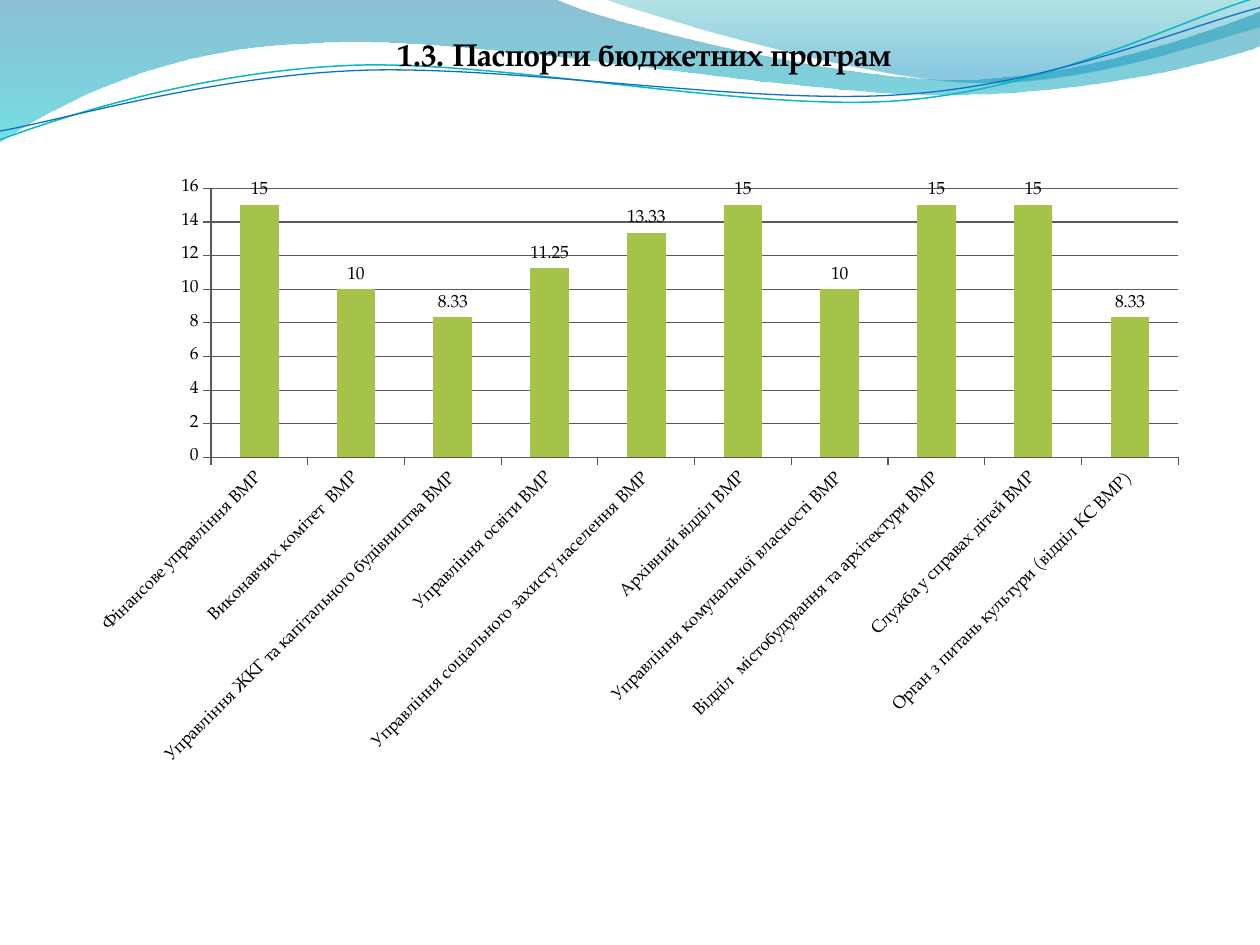
"""Build the slide on budget programme passports: a wave banner, a title and a column chart."""
from dataclasses import dataclass
from typing import Optional

from lxml import etree
from pptx import Presentation
from pptx import util as u
from pptx.chart.data import CategoryChartData
from pptx.dml.color import RGBColor
from pptx.enum import chart as charts, text
from pptx.oxml.ns import qn

GRID = u.Inches(1)
FONT = "TeX Gyre Pagella"
COLOURS = {
    "text": "000000",
    "axis": "595959",
    "column": "A5C249",
    "deep": "0074A1",
    "cyan": "00C6CF",
    "teal": "00A1A9",
    "sky": "008BBF",
    "teal line": "0AB8BF",
    "blue line": "0F6FC6",
}
SCORES = {
    "Фінансове управління ВМР": 15,
    "Виконавчих комітет  ВМР": 10,
    "Управління ЖКГ та капітального будівництва ВМР": 8.33,
    "Управління освіти ВМР": 11.25,
    "Управління соціального захисту населення ВМР": 13.33,
    "Архівний відділ ВМР": 15,
    "Управління комунальної власності ВМР": 10,
    "Відділ  містобудування та архітектури ВМР": 15,
    "Служба у справах дітей ВМР": 15,
    "Орган з питань культури (відділ КС ВМР)": 8.33,
}


@dataclass(frozen=True)
class Stop:
    """A gradient stop; position and opacity are shares of one."""
    position: float
    colour: str
    opacity: float


@dataclass(frozen=True)
class Wave:
    """An outline in grid units; one point makes a straight step, three make a curve."""
    start: tuple
    steps: tuple
    stops: tuple = ()
    line: Optional[str] = None
    weight: float = 0


WAVES = (
    Wave((0, 0), (
        ((4.4, -0.01),),
        ((4.76, 0.17), (6.64, 0.63), (7.58, 0.63)),
        ((8.53, 0.63), (9.58, 0.26), (10, 0.09)),
        ((10.01, 0.36),),
        ((9.83, 0.44), (8.7, 0.76), (7.46, 0.75)),
        ((6.22, 0.75), (3.82, 0.28), (2.57, 0.34)),
        ((1.29, 0.36), (0.46, 0.83), (-0.01, 1.13)),
    ), stops=(Stop(0, "deep", 0.45), Stop(1, "cyan", 0.55))),
    Wave((4.79, -0.01), (
        ((5.09, 0.11), (6.82, 0.62), (7.69, 0.65)),
        ((8.56, 0.69), (9.61, 0.32), (10, 0.21)),
        ((10, 0),),
    ), stops=(Stop(0, "teal", 0.3), Stop(0.8, "sky", 0.45))),
    Wave((0, 1.11), (
        ((0.48, 0.93), (1.58, 0.57), (2.77, 0.52)),
        ((3.95, 0.47), (5.93, 0.89), (7.13, 0.8)),
        ((8.33, 0.71), (9.38, 0.15), (9.98, -0.02)),
    ), line="teal line", weight=0.85),
    Wave((0, 1.04), (
        ((0.47, 0.96), (1.64, 0.61), (2.83, 0.56)),
        ((4.03, 0.51), (5.97, 0.84), (7.17, 0.75)),
        ((8.36, 0.67), (9.41, 0.21), (10, 0.06)),
    ), line="blue line", weight=0.75),
)


def colour(name: str) -> RGBColor:
    """Look up a named colour."""
    return RGBColor.from_string(COLOURS[name])


def grid(*lengths: float) -> list:
    """Turn grid units into slide lengths."""
    return [u.Emu(round(length * GRID)) for length in lengths]


def curve_steps(shape, steps: tuple) -> None:
    """Join each run of three straight segments into one cubic curve."""
    segments = iter(list(shape._element.iter(qn("a:lnTo"))))
    for step in steps:
        first, *others = [next(segments) for _ in step]
        if others:
            first.tag = qn("a:cubicBezTo")
            for segment in others:
                first.append(segment[0])
                segment.getparent().remove(segment)


def fill_gradient(shape, stops: tuple) -> None:
    """Fill a shape from top to bottom with see-through colours."""
    shape.fill.gradient()
    shape.fill.gradient_angle = 270
    for target, stop in zip(shape.fill.gradient_stops, stops):
        target.position = stop.position
        target.color.rgb = colour(stop.colour)
        alpha = etree.SubElement(target._gs[0], qn("a:alpha"))
        alpha.set("val", str(round(stop.opacity * 100000)))


def draw_wave(slide, wave: Wave) -> None:
    """Draw one filled or stroked wave."""
    builder = slide.shapes.build_freeform(*grid(*wave.start))
    points = [grid(*point) for step in wave.steps for point in step]
    builder.add_line_segments(points, close=bool(wave.stops))
    shape = builder.convert_to_shape()
    shape.shadow.inherit = False
    curve_steps(shape, wave.steps)
    if wave.stops:
        fill_gradient(shape, wave.stops)
        shape.line.fill.background()
    else:
        shape.fill.background()
        shape.line.color.rgb = colour(wave.line)
        shape.line.width = u.Pt(wave.weight)


def draw_title(slide, wording: str) -> None:
    """Place the title over the waves."""
    title = slide.shapes.title
    slide.shapes._spTree.append(title._element)
    title.left, title.top, title.width, title.height = grid(2.81, 0.23, 4.61, 0.4)
    frame = title.text_frame
    frame.text = wording
    frame.vertical_anchor = text.MSO_ANCHOR.TOP
    frame.auto_size = text.MSO_AUTO_SIZE.SHAPE_TO_FIT_TEXT
    paragraph = frame.paragraphs[0]
    paragraph.alignment = text.PP_ALIGN.CENTER
    font = paragraph.font
    font.name, font.size, font.bold = FONT, u.Pt(18), True
    font.color.rgb = colour("text")


def draw_chart(slide, scores: dict) -> None:
    """Draw the scores as labelled columns."""
    data = CategoryChartData()
    data.categories = scores.keys()
    data.add_series("Series 1", scores.values())
    chart = slide.shapes.add_chart(
        charts.XL_CHART_TYPE.COLUMN_CLUSTERED, *grid(0.62, 1.33, 8.91, 4.84), data).chart
    chart.has_legend = chart.has_title = False
    chart.font.name, chart.font.size = FONT, u.Pt(10)
    chart.font.color.rgb = colour("text")
    values, categories = chart.value_axis, chart.category_axis
    values.has_major_gridlines = True
    for axis in (values, categories):
        axis.major_tick_mark = charts.XL_TICK_MARK.OUTSIDE
    for line in (values.format.line, categories.format.line, values.major_gridlines.format.line):
        line.color.rgb = colour("axis")
        line.width = u.Pt(0.7)
    plot = chart.plots[0]
    plot.gap_width, plot.vary_by_categories = 150, False
    plot.has_data_labels = True
    plot.data_labels.show_value = True
    plot.data_labels.position = charts.XL_LABEL_POSITION.OUTSIDE_END
    fill = plot.series[0].format.fill
    fill.solid()
    fill.fore_color.rgb = colour("column")


def main() -> None:
    """Assemble and save the slide."""
    presentation = Presentation()
    presentation.slide_width, presentation.slide_height = grid(10, 7.5)
    slide = presentation.slides.add_slide(presentation.slide_layouts[5])
    for wave in WAVES:
        draw_wave(slide, wave)
    draw_title(slide, "1.3. Паспорти бюджетних програм")
    draw_chart(slide, SCORES)
    presentation.save("out.pptx")


if __name__ == "__main__":
    main()
